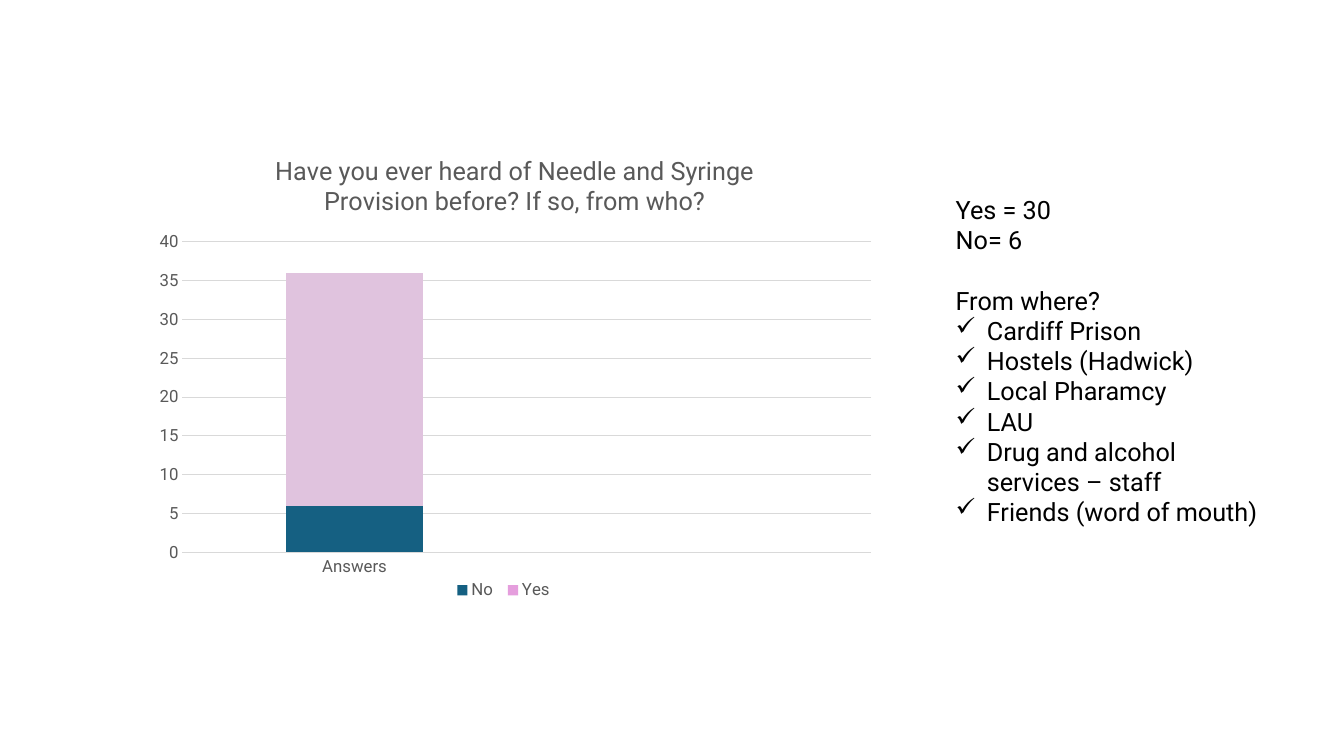
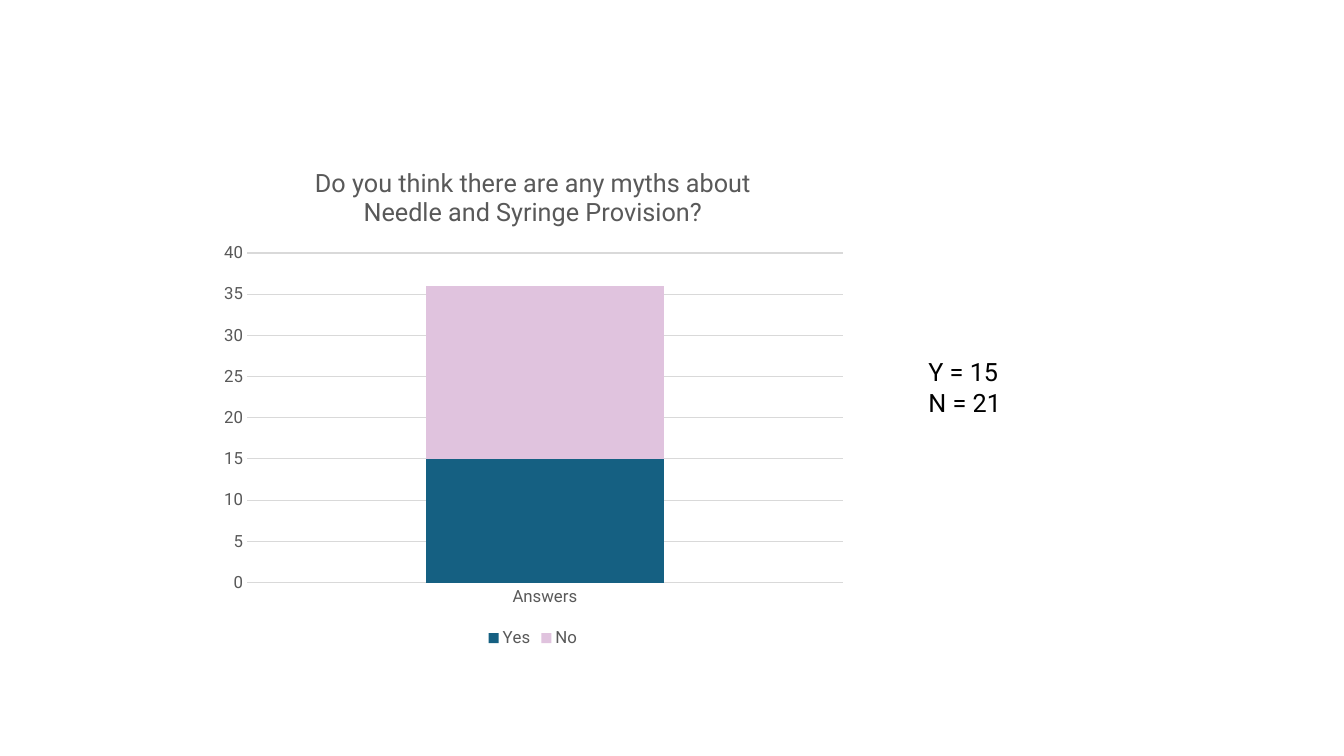
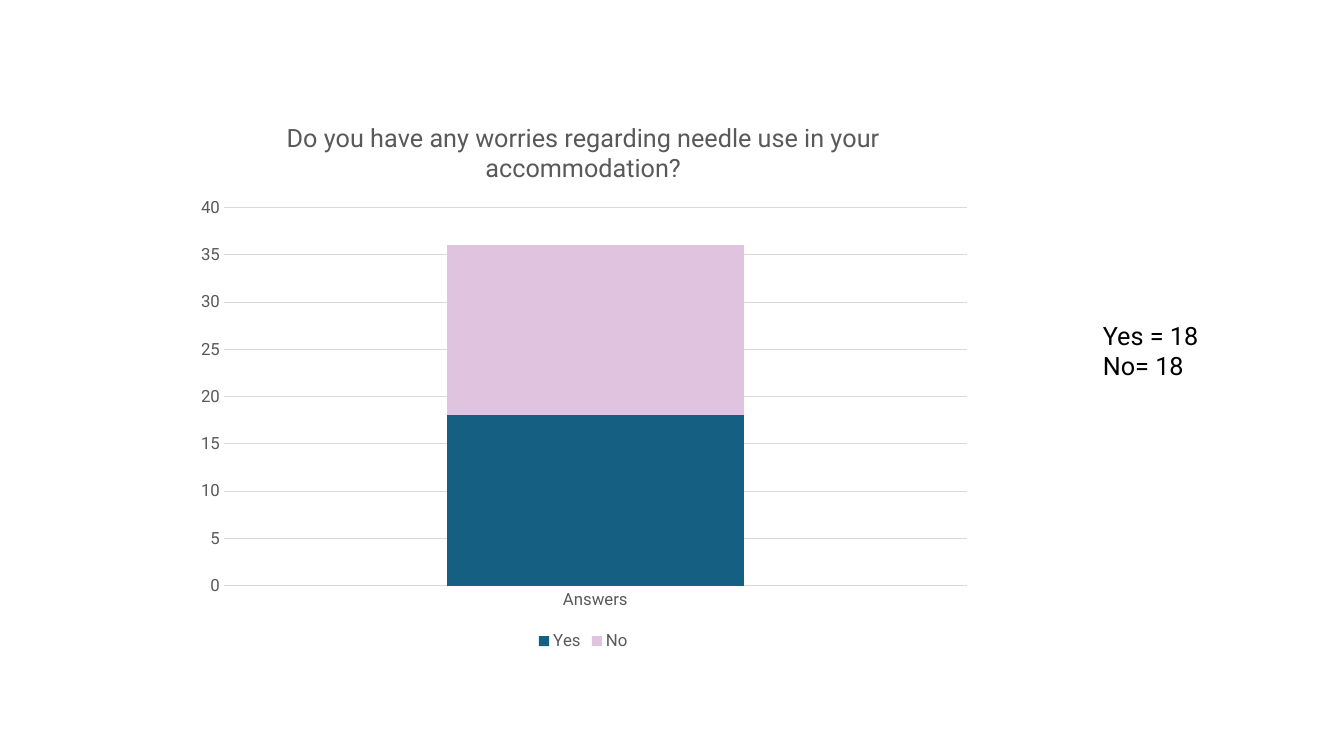
from lxml.etree import SubElement
from pptx import Presentation
from pptx.chart.data import CategoryChartData
from pptx.dml.color import RGBColor
from pptx.enum.chart import XL_CHART_TYPE, XL_LEGEND_POSITION, XL_TICK_MARK
from pptx.oxml import parse_xml
from pptx.oxml.ns import nsdecls, qn
from pptx.util import Inches, Pt

FONT = "Roboto"
BLUE, LILAC, PINK = "156082", "E0C3DE", "E59EDD"
GREY, GRID, BLACK = "595959", "D9D9D9", "000000"
PLOT_LEFT, PLOT_TOP, PLOT_RIGHT, PLOT_BOTTOM = 0.38, 1.06, 0.14, 0.69
TICK_INDENT = 0.31

SLIDES = [
    {
        "title": "Have you ever heard of Needle and Syringe Provision before? If so, from who?",
        "chart": (1.43, 1.34, 7.35, 4.83),
        "categories": ["Answers", ""],
        "series": [("No", [6, None], BLUE), ("Yes", [30, None], PINK)],
        "point_color": LILAC,
        "legend": (0.41, 0.91, 0.15, 0.05),
        "notes": (9.38, 1.88, 3.22, 4.04),
        "counts": ["Yes = 30", "No= 6"],
        "heading": "From where?",
        "sources": [
            "Cardiff Prison",
            "Hostels (Hadwick)",
            "Local Pharamcy",
            "LAU",
            "Drug and alcohol services – staff",
            "Friends (word of mouth)",
        ],
    },
    {
        "title": "Do you think there are any myths about Needle and Syringe Provision?",
        "chart": (2.07, 1.45, 6.43, 5.02),
        "categories": ["Answers"],
        "series": [("Yes", [15], BLUE), ("No", [21], LILAC)],
        "notes": (9.11, 3.49, 1.53, 0.71),
        "counts": ["Y = 15", "N = 21"],
    },
    {
        "title": "Do you have any worries regarding needle use in your accommodation?",
        "chart": (1.84, 1, 7.89, 5.5),
        "categories": ["Answers"],
        "series": [("Yes", [18], BLUE), ("No", [18], LILAC)],
        "notes": (10.84, 3.13, 1.89, 0.71),
        "counts": ["Yes = 18", "No= 18"],
    },
]


def rgb(color):
    return RGBColor.from_string(color)


def style_font(font, size, color):
    font.name, font.size, font.bold = FONT, Pt(size), False
    font.color.rgb = rgb(color)


def fill_solid(target, color):
    target.format.fill.solid()
    target.format.fill.fore_color.rgb = rgb(color)


def set_layout(element, position, shares, inner=False):
    for old_layout in element.findall(qn("c:layout")):
        element.remove(old_layout)
    layout = parse_xml(f"<c:layout {nsdecls('c')}><c:manualLayout/></c:layout>")
    settings = [("layoutTarget", "inner")] if inner else []
    settings += [("xMode", "edge"), ("yMode", "edge")]
    settings += zip("xywh", (f"{share:.4f}" for share in shares))
    for name, value in settings:
        SubElement(layout[0], qn(f"c:{name}")).set("val", value)
    element.insert(position, layout)


def style_axes(chart):
    for axis in (chart.category_axis, chart.value_axis):
        axis.major_tick_mark = axis.minor_tick_mark = XL_TICK_MARK.NONE
        style_font(axis.tick_labels.font, 12, GREY)
    chart.value_axis.format.line.fill.background()
    chart.value_axis.minimum_scale = 0
    chart.value_axis.maximum_scale = 40
    chart.value_axis.major_unit = 5
    chart.value_axis.has_major_gridlines = True
    for lines in (chart.category_axis, chart.value_axis.major_gridlines):
        lines.format.line.color.rgb = rgb(GRID)
        lines.format.line.width = Pt(0.75)


def add_answer_chart(slide, content):
    data = CategoryChartData()
    data.categories = content["categories"]
    for name, values, _ in content["series"]:
        data.add_series(name, values)
    frame = slide.shapes.add_chart(
        XL_CHART_TYPE.COLUMN_STACKED, *map(Inches, content["chart"]), data
    )
    chart = frame.chart
    style_font(chart.font, 10, BLACK)

    chart.has_title = True
    chart.chart_title.include_in_layout = False
    chart.chart_title.text_frame.text = content["title"]
    style_font(chart.chart_title.text_frame.paragraphs[0].font, 18, GREY)

    plot = chart.plots[0]
    plot.gap_width, plot.overlap, plot.vary_by_categories = 150, 100, False
    for series, (_, _, color) in zip(plot.series, content["series"]):
        fill_solid(series, color)
    if "point_color" in content:
        fill_solid(plot.series[-1].points[0], content["point_color"])
    style_axes(chart)

    chart.has_legend = True
    chart.legend.position = XL_LEGEND_POSITION.BOTTOM
    chart.legend.include_in_layout = False
    style_font(chart.legend.font, 12, GREY)
    if "legend" in content:
        set_layout(chart.legend._element, 1, content["legend"])

    _, _, width, height = content["chart"]
    shares = (
        PLOT_LEFT / width,
        PLOT_TOP / height,
        1 - (PLOT_LEFT + PLOT_RIGHT) / width,
        1 - (PLOT_TOP + PLOT_BOTTOM) / height,
    )
    plot_area = chart._chartSpace.find(f".//{qn('c:plotArea')}")
    set_layout(plot_area, 0, shares, inner=True)


def add_tick(paragraph):
    properties = paragraph._p.get_or_add_pPr()
    properties.set("marL", str(Inches(TICK_INDENT)))
    properties.set("indent", str(-Inches(TICK_INDENT)))
    SubElement(properties, qn("a:buChar")).set("char", "✓")


def add_notes(slide, content):
    frame = slide.shapes.add_textbox(*map(Inches, content["notes"])).text_frame
    frame.word_wrap = True
    heading, sources = content.get("heading"), content.get("sources", [])
    lines = content["counts"] + ([heading] if heading else []) + sources
    frame.text = "\n".join(lines)
    for paragraph, line in zip(frame.paragraphs, lines):
        style_font(paragraph.font, 18, BLACK)
        if line == heading:
            paragraph.space_before = Pt(21.5)
        if line in sources:
            add_tick(paragraph)


def main():
    """Build the survey slides, each a stacked column chart beside its counts."""
    presentation = Presentation()
    presentation.slide_width, presentation.slide_height = Inches(13.33), Inches(7.5)
    for content in SLIDES:
        slide = presentation.slides.add_slide(presentation.slide_layouts[6])
        add_answer_chart(slide, content)
        add_notes(slide, content)
    presentation.save("out.pptx")


if __name__ == "__main__":
    main()
